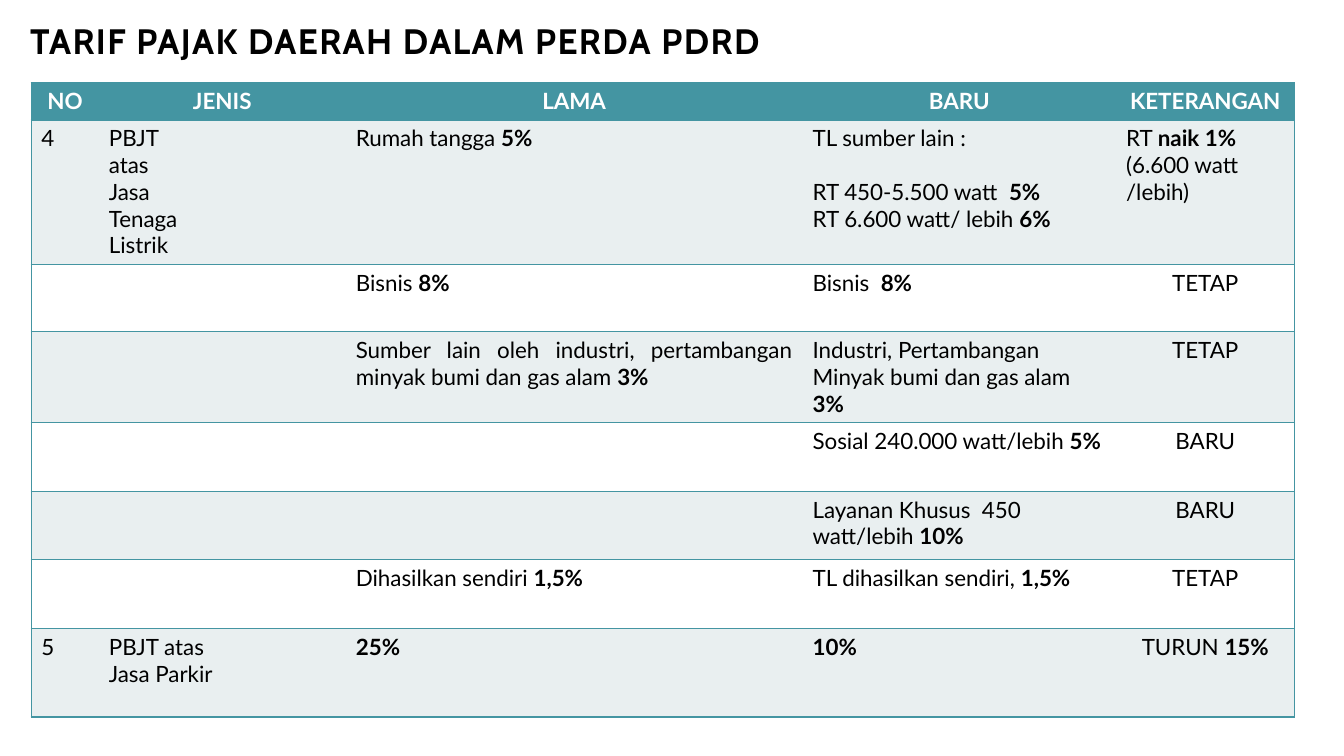
from dataclasses import dataclass

from lxml import etree
from pptx import Presentation
from pptx.dml.color import RGBColor
from pptx.enum.text import MSO_ANCHOR, PP_ALIGN
from pptx.oxml.ns import qn
from pptx.util import Inches, Pt

LEFT = PP_ALIGN.LEFT
CENTER = PP_ALIGN.CENTER
JUSTIFY = PP_ALIGN.JUSTIFY
MIDDLE = MSO_ANCHOR.MIDDLE
BLANK_LAYOUT = 6


@dataclass(frozen=True)
class Theme:
    teal: str = "4495A2"
    band: str = "E9EFF0"
    white: str = "FFFFFF"
    black: str = "000000"
    title_font: str = "Cabin"
    body_font: str = "Lato"
    title_size: float = 25.2
    body_size: float = 16
    line_gap: float = 19.2
    border_width: float = 1


HEADERS = ["NO", "JENIS", "LAMA", "BARU", "KETERANGAN"]
COLUMN_WIDTHS = [0.67, 2.45, 4.53, 3.11, 1.77]
ROW_HEIGHTS = [0.37, 1.43, 0.67, 0.9, 0.68, 0.68, 0.68, 0.88]
COLUMN_ALIGNMENTS = [LEFT, LEFT, JUSTIFY, LEFT, CENTER]
RATES = [
    ["4", "PBJT\natas\nJasa\nTenaga\nListrik", "Rumah tangga **5%**",
     "TL sumber lain :\nRT 450-5.500 watt  **5%**\nRT 6.600 watt/ lebih **6%**",
     "RT **naik 1% **(6.600 watt /lebih)"],
    ["", "", "Bisnis **8%**", "Bisnis  **8%**", "TETAP"],
    ["", "", "Sumber lain oleh industri, pertambangan minyak bumi dan gas alam **3%**",
     "Industri, Pertambangan Minyak bumi dan gas alam **3%**", "TETAP"],
    ["", "", "", "Sosial 240.000 watt/lebih **5%**", "BARU"],
    ["", "", "", "Layanan Khusus  450 watt/lebih **10%**", "BARU"],
    ["", "", "Dihasilkan sendiri **1,5%**", "TL dihasilkan sendiri, **1,5%**", "TETAP"],
    ["5", "PBJT atas\nJasa Parkir", "**25%**", "**10%**", "TURUN **15%**"],
]


class SlideBuilder:
    def __init__(self, slide, theme):
        self.slide = slide
        self.theme = theme

    def style_span(self, span, font, size, color, bold):
        span.font.name = font
        span.font.size = Pt(size)
        span.font.color.rgb = RGBColor.from_string(color)
        span.font.bold = bold

    def add_title(self, text, left, top, width, height):
        theme = self.theme
        box = self.slide.shapes.add_textbox(
            Inches(left), Inches(top), Inches(width), Inches(height))
        frame = box.text_frame
        frame.word_wrap = True
        frame.vertical_anchor = MIDDLE
        frame.text = text
        para = frame.paragraphs[0]
        para.line_spacing = 0.9
        span = para.runs[0]
        self.style_span(span, theme.title_font, theme.title_size, theme.black, True)
        span.font._element.set("spc", "100")

    def set_borders(self, cell, visible_sides):
        properties = cell._tc.get_or_add_tcPr()
        for position, side in enumerate("LRTB"):
            line = etree.Element(qn(f"a:ln{side}"), w=str(Pt(self.theme.border_width)))
            if side in visible_sides:
                fill = etree.SubElement(line, qn("a:solidFill"))
                etree.SubElement(fill, qn("a:srgbClr"), val=self.theme.teal)
            else:
                etree.SubElement(line, qn("a:noFill"))
            properties.insert(position, line)

    def fill_cell(self, cell, text, background, color, alignment):
        theme = self.theme
        cell.fill.solid()
        cell.fill.fore_color.rgb = RGBColor.from_string(background)
        cell.text_frame.text = text.replace("**", "")
        for para, line in zip(cell.text_frame.paragraphs, text.split("\n")):
            para.text = ""
            para.alignment = alignment
            para.font.size = Pt(theme.body_size)
            for index, part in enumerate(line.split("**")):
                if part:
                    span = para.add_run()
                    span.text = part
                    self.style_span(span, theme.body_font, theme.body_size,
                                    color, index % 2 == 1)

    def add_table(self, rows, left, top):
        theme = self.theme
        table = self.slide.shapes.add_table(
            len(rows), len(COLUMN_WIDTHS), Inches(left), Inches(top),
            Inches(sum(COLUMN_WIDTHS)), Inches(sum(ROW_HEIGHTS))).table
        for column, width in zip(table.columns, COLUMN_WIDTHS):
            column.width = Inches(width)
        for row, height in zip(table.rows, ROW_HEIGHTS):
            row.height = Inches(height)
        table.first_row = False
        table.horz_banding = False
        last = len(COLUMN_WIDTHS) - 1
        for row_index, texts in enumerate(rows):
            header = row_index == 0
            background = theme.teal if header else theme.band if row_index % 2 else theme.white
            color = theme.white if header else theme.black
            for column_index, text in enumerate(texts):
                cell = table.cell(row_index, column_index)
                alignment = CENTER if header else COLUMN_ALIGNMENTS[column_index]
                self.fill_cell(cell, text, background, color, alignment)
                sides = "TB" + "L" * (column_index == 0) + "R" * (column_index == last)
                self.set_borders(cell, sides)
        return table


def main():
    deck = Presentation()
    deck.slide_width = Inches(13.33)
    deck.slide_height = Inches(7.5)
    theme = Theme()
    page = SlideBuilder(deck.slides.add_slide(deck.slide_layouts[BLANK_LAYOUT]), theme)
    page.add_title("TARIF PAJAK DAERAH DALAM PERDA PDRD", 0.2, 0.19, 11, 0.48)
    header = [f"**{label}**" for label in HEADERS]
    table = page.add_table([header, *RATES], 0.31, 0.82)
    table.cell(1, 2).text_frame.paragraphs[0].alignment = LEFT
    table.cell(1, 4).text_frame.paragraphs[0].alignment = LEFT
    table.cell(1, 3).text_frame.paragraphs[1].space_before = Pt(theme.line_gap)
    deck.save("out.pptx")


if __name__ == "__main__":
    main()
